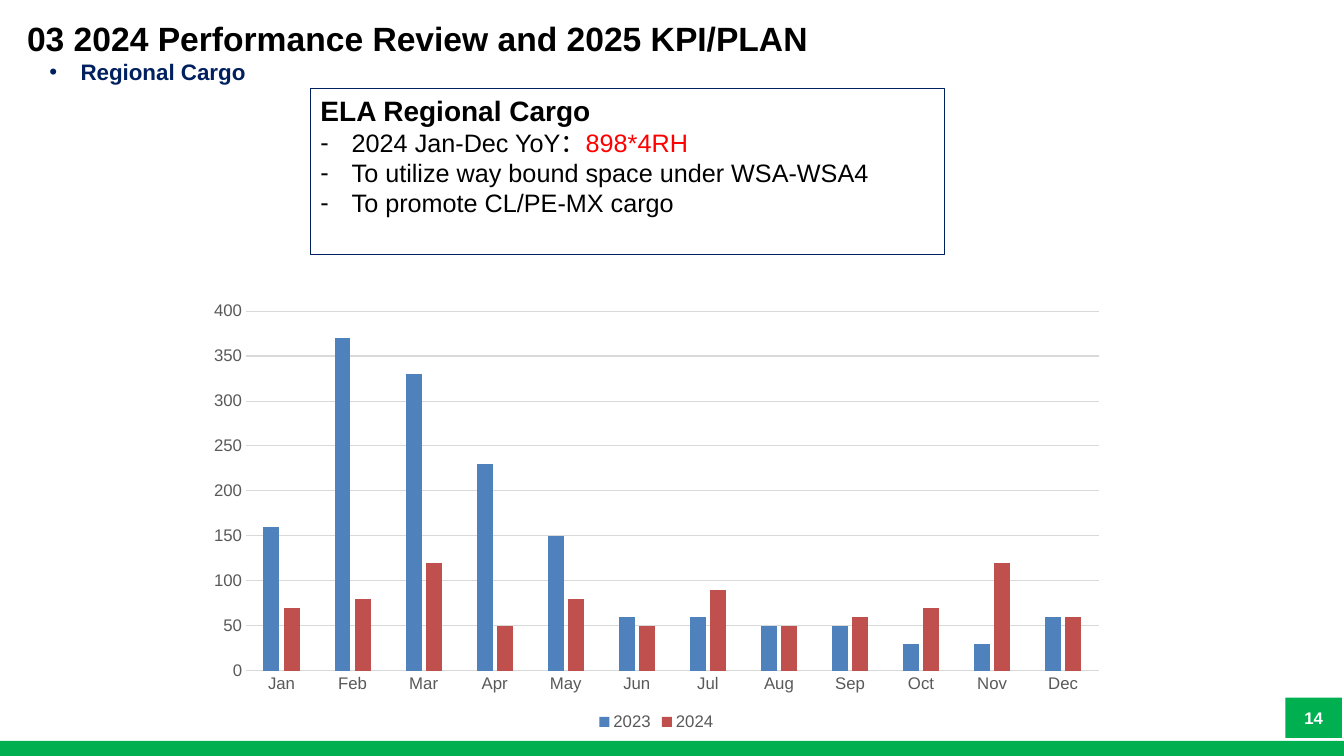
import dataclasses

import pptx
import pptx.chart.data
import pptx.dml.color
import pptx.enum.chart
import pptx.enum.shapes
import pptx.enum.text
import pptx.oxml.ns
import pptx.util
from lxml import etree

Inches = pptx.util.Inches
Pt = pptx.util.Pt
Align = pptx.enum.text.PP_ALIGN
Anchor = pptx.enum.text.MSO_ANCHOR


@dataclasses.dataclass(frozen=True)
class Theme:
    font: str = "Arial"
    black: str = "000000"
    white: str = "FFFFFF"
    navy: str = "002060"
    green: str = "00B050"
    red: str = "FF0000"
    gray: str = "595959"
    rule: str = "D9D9D9"
    blue: str = "4F81BD"
    brick: str = "C0504D"
    title: int = 24
    head: int = 20
    body: int = 18
    topic: int = 16
    small: int = 12


THEME = Theme()

MONTHS = ["Jan", "Feb", "Mar", "Apr", "May", "Jun",
          "Jul", "Aug", "Sep", "Oct", "Nov", "Dec"]
YEARS = [
    ("2023", THEME.blue, [160, 370, 330, 230, 150, 60, 60, 50, 50, 30, 30, 60]),
    ("2024", THEME.brick, [70, 80, 120, 50, 80, 50, 90, 50, 60, 70, 120, 60]),
]


def rgb(color):
    return pptx.dml.color.RGBColor.from_string(color)


def style(font, size, color, bold=False):
    font.name = THEME.font
    font.size = Pt(size)
    font.bold = bold
    font.color.rgb = rgb(color)


def add_run(para, text, size, color=THEME.black, bold=False):
    run = para.add_run()
    run.text = text
    style(run.font, size, color, bold)


def add_bullet(para, mark):
    props = para._p.get_or_add_pPr()
    props.set("marL", str(Inches(0.31)))
    props.set("indent", str(-Inches(0.31)))
    font = etree.SubElement(props, pptx.oxml.ns.qn("a:buFont"))
    font.set("typeface", THEME.font)
    char = etree.SubElement(props, pptx.oxml.ns.qn("a:buChar"))
    char.set("char", mark)


def add_rect(slide, left, top, width, height, fill, line=None):
    rect = slide.shapes.add_shape(
        pptx.enum.shapes.MSO_SHAPE.RECTANGLE,
        Inches(left), Inches(top), Inches(width), Inches(height))
    rect.shadow.inherit = False
    rect.fill.solid()
    rect.fill.fore_color.rgb = rgb(fill)
    if line:
        rect.line.color.rgb = rgb(line)
        rect.line.width = Pt(0.75)
    else:
        rect.line.fill.background()
    return rect


def add_label(slide, left, top, width, height):
    box = slide.shapes.add_textbox(
        Inches(left), Inches(top), Inches(width), Inches(height))
    box.text_frame.word_wrap = True
    box.text_frame.vertical_anchor = Anchor.MIDDLE
    return box.text_frame.paragraphs[0]


def add_notice(slide):
    frame = add_rect(slide, 3.08, 0.88, 6.29, 1.65,
                     THEME.white, THEME.navy).text_frame
    frame.word_wrap = True
    frame.vertical_anchor = Anchor.TOP
    head = frame.paragraphs[0]
    head.alignment = Align.LEFT
    add_run(head, "ELA Regional Cargo", THEME.head, bold=True)
    points = [
        [("2024 Jan-Dec YoY：", THEME.black), ("898*4RH", THEME.red)],
        [("To utilize way bound space under WSA-WSA4", THEME.black)],
        [("To promote CL/PE-MX cargo", THEME.black)],
    ]
    for runs in points:
        para = frame.add_paragraph()
        para.alignment = Align.LEFT
        add_bullet(para, "-")
        for text, color in runs:
            add_run(para, text, THEME.body, color)


def add_bars(slide):
    enum = pptx.enum.chart
    data = pptx.chart.data.CategoryChartData()
    data.categories = MONTHS
    for name, _, values in YEARS:
        data.add_series(name, values)
    chart = slide.shapes.add_chart(
        enum.XL_CHART_TYPE.COLUMN_CLUSTERED,
        Inches(1.94), Inches(2.91), Inches(9.14), Inches(4.38), data).chart
    chart.has_title = False
    style(chart.font, THEME.small, THEME.gray)

    # Columns
    plot = chart.plots[0]
    plot.gap_width = 219
    plot.overlap = -27
    plot.vary_by_categories = False
    for series, (_, color, _) in zip(plot.series, YEARS):
        series.format.fill.solid()
        series.format.fill.fore_color.rgb = rgb(color)

    # Axes
    for axis in (chart.category_axis, chart.value_axis):
        axis.major_tick_mark = enum.XL_TICK_MARK.NONE
        axis.minor_tick_mark = enum.XL_TICK_MARK.NONE
        style(axis.tick_labels.font, THEME.small, THEME.gray)
    scale = chart.value_axis
    scale.minimum_scale, scale.maximum_scale = 0, 400
    scale.major_unit = 50
    scale.format.line.fill.background()
    scale.has_major_gridlines = True
    for part in (chart.category_axis, scale.major_gridlines):
        part.format.line.color.rgb = rgb(THEME.rule)
        part.format.line.width = Pt(0.75)

    # Legend
    chart.has_legend = True
    chart.legend.position = enum.XL_LEGEND_POSITION.BOTTOM
    chart.legend.include_in_layout = False
    style(chart.legend.font, THEME.small, THEME.gray)


def main():
    deck = pptx.Presentation()
    deck.slide_width, deck.slide_height = Inches(13.33), Inches(7.5)
    slide = deck.slides.add_slide(deck.slide_layouts[6])

    # Footer band and page number
    add_rect(slide, 0, 7.35, 13.33, 0.15, THEME.green)
    badge = add_rect(slide, 12.75, 6.92, 0.56, 0.4, THEME.green).text_frame
    badge.vertical_anchor = Anchor.MIDDLE
    badge.paragraphs[0].alignment = Align.CENTER
    add_run(badge.paragraphs[0], "14", THEME.small, THEME.white, True)

    # Notice box
    add_notice(slide)

    # Topic
    topic = add_label(slide, 0.39, 0.4, 2.68, 0.63)
    add_bullet(topic, "•")
    add_run(topic, "Regional Cargo", THEME.topic, THEME.navy, True)

    # Monthly chart
    add_bars(slide)

    # Title
    title = add_label(slide, 0.17, 0.05, 12, 0.66)
    add_run(title, "03 2024 Performance Review and 2025 KPI/PLAN",
            THEME.title, bold=True)

    deck.save("out.pptx")


if __name__ == "__main__":
    main()
